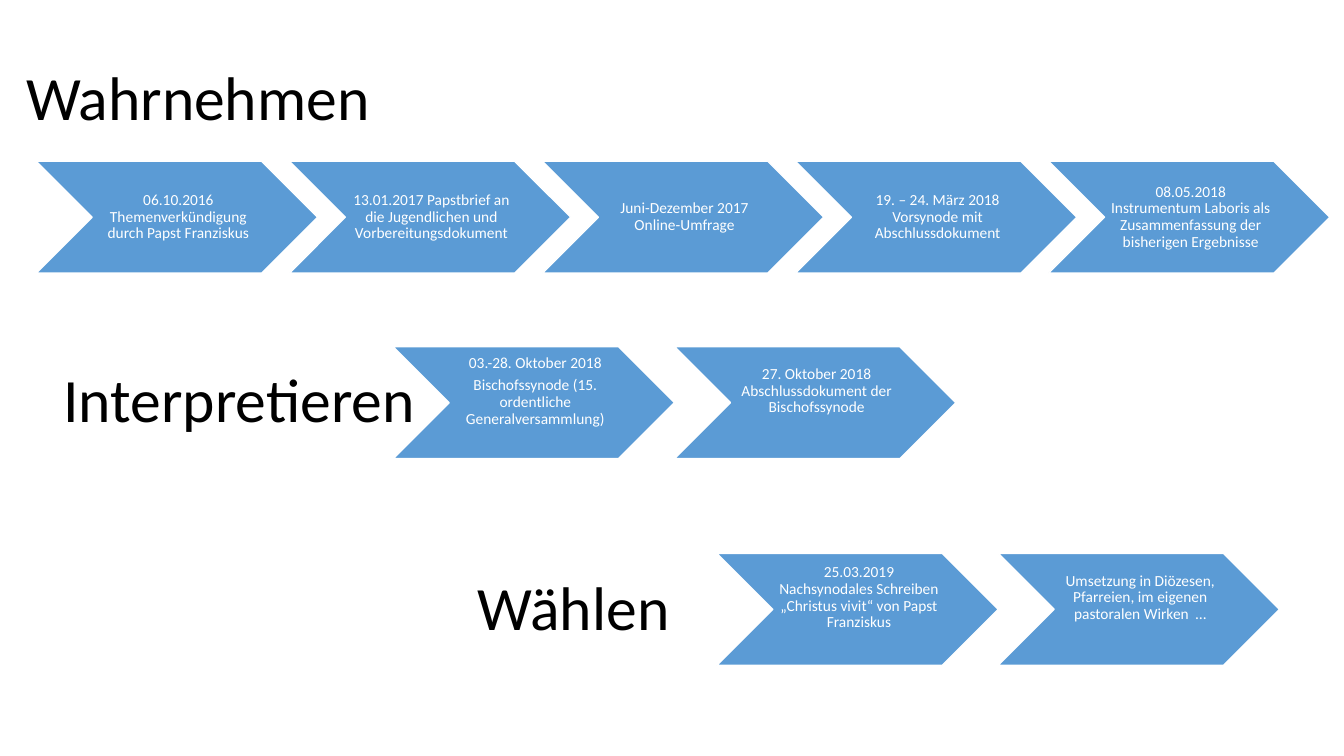
from dataclasses import dataclass

from pptx import Presentation
from pptx.dml.color import RGBColor
from pptx.enum.shapes import MSO_SHAPE
from pptx.enum.text import MSO_ANCHOR, MSO_AUTO_SIZE, PP_ALIGN
from pptx.shapes.base import BaseShape
from pptx.slide import Slide
from pptx.util import Inches, Pt

CHEVRON = MSO_SHAPE.CHEVRON
MIDDLE = MSO_ANCHOR.MIDDLE
NO_AUTOFIT = MSO_AUTO_SIZE.NONE
LEFT, CENTER = PP_ALIGN.LEFT, PP_ALIGN.CENTER

BLUE = RGBColor(0x5B, 0x9B, 0xD5)
WHITE = RGBColor(0xFF, 0xFF, 0xFF)
BLACK = RGBColor(0x00, 0x00, 0x00)

FONT = "Calibri"
STEP_W, STEP_H = 2.79, 1.11
HEADING_H = 1.45


@dataclass(frozen=True)
class Heading:
    text: str
    left: float
    top: float
    width: float


@dataclass(frozen=True)
class Phase:
    heading: Heading
    left: float
    top: float
    pitch: float
    bottom_inset: float
    steps: tuple[str, ...]


PHASES = (
    Phase(Heading("Wahrnehmen", 0.16, 0.27, 11.5), 0.36, 1.6, 2.51, 0.02, (
        "06.10.2016 Themenverkündigung durch Papst Franziskus",
        "13.01.2017 Papstbrief an die Jugendlichen und Vorbereitungsdokument",
        "Juni-Dezember 2017 Online-Umfrage",
        "19. – 24. März 2018 Vorsynode mit Abschlussdokument",
        "08.05.2018 Instrumentum Laboris als Zusammenfassung der bisherigen Ergebnisse",
    )),
    Phase(Heading("Interpretieren", 0.53, 3.27, 11.5), 3.9, 3.44, 2.79, 0.25, (
        "03.-28. Oktober 2018\nBischofssynode (15. ordentliche Generalversammlung)",
        "27. Oktober 2018 Abschlussdokument der Bischofssynode",
    )),
    Phase(Heading("Wählen", 4.64, 5.33, 5.46), 7.11, 5.49, 2.79, 0.25, (
        "25.03.2019 Nachsynodales Schreiben „Christus vivit“ von Papst Franziskus",
        "Umsetzung in Diözesen, Pfarreien, im eigenen pastoralen Wirken  …",
    )),
)
TITLE = PHASES[1].heading


def apply(target: object, values: dict[str, object]) -> None:
    for name, value in values.items():
        setattr(target, name, value)


def write(shape: BaseShape, text: str, size: int, color: RGBColor,
          align: PP_ALIGN, gap: float) -> None:
    tf = shape.text_frame
    tf.text = text
    apply(tf, {"word_wrap": True, "auto_size": NO_AUTOFIT, "vertical_anchor": MIDDLE})
    for i, p in enumerate(tf.paragraphs):
        after = Pt(gap) if i < len(tf.paragraphs) - 1 else Pt(0)
        apply(p, {"alignment": align, "line_spacing": 0.9,
                  "space_before": Pt(0), "space_after": after})
        for r in p.runs:
            apply(r.font, {"name": FONT, "size": Pt(size)})
            r.font.color.rgb = color


def add_heading(s: Slide, heading: Heading) -> None:
    box = (Inches(heading.left), Inches(heading.top),
           Inches(heading.width), Inches(HEADING_H))
    if heading is TITLE:
        shape = s.shapes.title
        apply(shape, dict(zip(("left", "top", "width", "height"), box)))
    else:
        shape = s.shapes.add_textbox(*box)
    write(shape, heading.text, 44, BLACK, LEFT, 0)


def add_step(s: Slide, phase: Phase, index: int) -> None:
    sp = s.shapes.add_shape(CHEVRON, Inches(phase.left + index * phase.pitch),
                            Inches(phase.top), Inches(STEP_W), Inches(STEP_H))
    sp.shadow.inherit = False
    sp.fill.solid()
    sp.fill.fore_color.rgb = BLUE
    sp.line.color.rgb = WHITE
    sp.line.width = Pt(1)
    apply(sp.text_frame, {"margin_left": Inches(0.05), "margin_right": Inches(0.02),
                          "margin_top": Inches(0.02),
                          "margin_bottom": Inches(phase.bottom_inset)})
    write(sp, phase.steps[index], 11, WHITE, CENTER, 4.5)


def main() -> None:
    prs = Presentation()
    apply(prs, {"slide_width": Inches(13.33), "slide_height": Inches(7.5)})
    s = prs.slides.add_slide(prs.slide_layouts.get_by_name("Title Only"))
    for phase in PHASES:
        for index in range(len(phase.steps)):
            add_step(s, phase, index)
        add_heading(s, phase.heading)
    prs.save("out.pptx")


if __name__ == "__main__":
    main()
